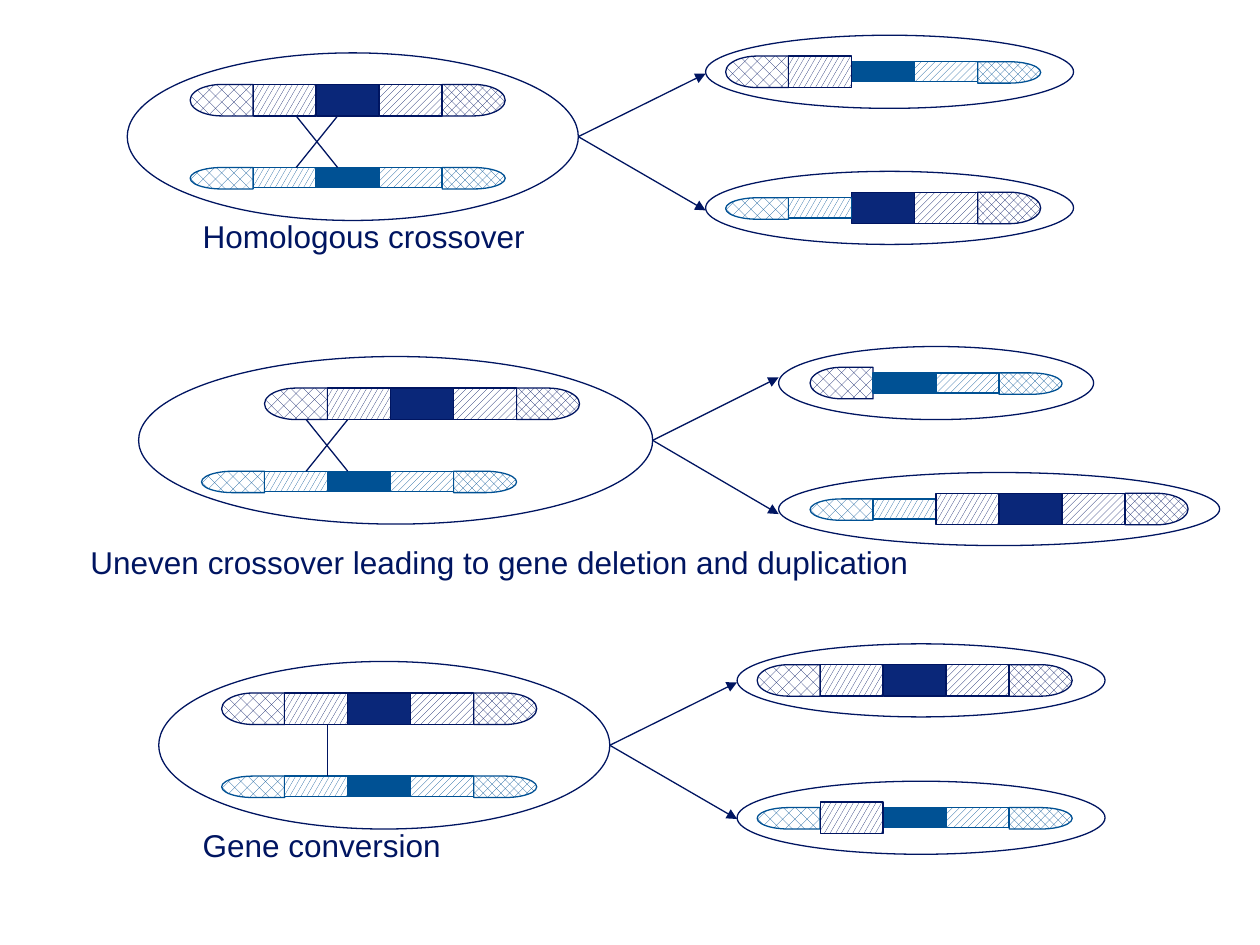
from lxml.etree import SubElement
from pptx import Presentation
from pptx.dml.color import RGBColor
from pptx.enum.dml import MSO_PATTERN as Pattern
from pptx.enum.shapes import MSO_CONNECTOR as Connector, MSO_SHAPE as Shape
from pptx.enum.text import MSO_AUTO_SIZE as AutoSize
from pptx.oxml.ns import qn
from pptx.util import Inches, Pt

COLORS = {"navy": "001561", "gene": "0A2779", "blue": "005194", "white": "FFFFFF"}
SEGMENT = 0.5
CAP = Shape.FLOWCHART_DELAY
SEGMENTS = {
    "E": (CAP, Pattern.PERCENT_50),
    "A": (CAP, Pattern.PERCENT_30),
    "D": (Shape.RECTANGLE, Pattern.WIDE_UPWARD_DIAGONAL),
    "C": (Shape.RECTANGLE, None),
    "B": (Shape.RECTANGLE, Pattern.LARGE_CONFETTI),
}
DRAW_ORDER = list(SEGMENTS)


def color(name):
    """Return the named colour."""
    return RGBColor.from_string(COLORS[name])


def add_outlined(page, kind, box, line="navy"):
    """Add an unfilled shape with a thin outline."""
    shape = page.shapes.add_shape(kind, *map(Inches, box))
    shape.shadow.inherit = False
    shape.fill.background()
    shape.line.color.rgb = color(line)
    shape.line.width = Pt(0.75)
    return shape


def add_line(page, start, end, arrow=False):
    """Add a straight line, with an arrowhead at its end if asked."""
    line = page.shapes.add_connector(Connector.STRAIGHT, *map(Inches, start + end))
    line.line.color.rgb = color("navy")
    line.line.width = Pt(0.75)
    properties = line.element.spPr
    if arrow:
        SubElement(properties.find(qn("a:ln")), qn("a:tailEnd"), type="triangle")
    SubElement(properties, qn("a:effectLst"))


def add_segment(page, code, left, middle):
    """Add one segment: upper case for the thick strand, lower case for the thin."""
    thick = code.isupper()
    kind, pattern = SEGMENTS[code.upper()]
    height = 0.25 if thick else 0.17 if kind == CAP else 0.16
    outline = "navy" if thick else "blue"
    top = middle - (0.125 if thick else 0.08)
    shape = add_outlined(page, kind, (left, top, SEGMENT, height), outline)
    if pattern is None:
        shape.fill.solid()
        shape.fill.fore_color.rgb = color("gene" if thick else "blue")
    else:
        shape.fill.patterned()
        shape.fill.pattern = pattern
        shape.fill.fore_color.rgb = color(outline)
        shape.fill.back_color.rgb = color("white")
    if code.upper() == "A":
        shape.element.spPr.find(qn("a:xfrm")).set("flipH", "1")


def add_chromosome(page, codes, left, middle):
    """Add a row of segments centred on a height."""
    ordered = sorted(enumerate(codes), key=lambda item: DRAW_ORDER.index(item[1].upper()))
    for place, code in ordered:
        add_segment(page, code, left + place * SEGMENT, middle)


def add_parent(page, box, thick_left, thin_left, exchanges):
    """Add the parent cell with two chromosomes and the lines between them."""
    left, top, width, height = box
    add_chromosome(page, "ABCDE", thick_left, top + 0.375)
    add_chromosome(page, "abcde", thin_left, top + 0.99)
    for upper, lower in exchanges:
        add_line(page, (upper, top + 0.5), (lower, top + 0.91))
    add_outlined(page, Shape.OVAL, box)


def add_daughter(page, box, codes, inset):
    """Add a daughter cell with one chromosome."""
    left, top, width, height = box
    add_chromosome(page, codes, left + inset, top + height / 2)
    add_outlined(page, Shape.OVAL, box)


def add_caption(page, box, text):
    """Add the name of a mechanism."""
    caption = page.shapes.add_textbox(*map(Inches, box))
    frame = caption.text_frame
    frame.word_wrap = False
    frame.auto_size = AutoSize.SHAPE_TO_FIT_TEXT
    para = frame.paragraphs[0]
    para.text = text
    para.font.name = "Arial"
    para.font.size = Pt(18)
    para.font.color.rgb = color("navy")


def add_mechanism(page, parent, strands, exchanges, daughters, inset, caption):
    """Add a parent cell, its two daughters, the arrows and the caption."""
    left, top, width, height = parent
    add_parent(page, parent, *strands, exchanges)
    start = (left + width, top + height / 2)
    for (box, codes), drop in zip(daughters, (-0.5, 0.585)):
        add_daughter(page, box, codes, inset)
        add_line(page, start, (box[0], start[1] + drop), arrow=True)
    add_caption(page, *caption)


def main():
    """Build the slide and save it."""
    deck = Presentation()
    deck.slide_width, deck.slide_height = Inches(10), Inches(7.5)
    page = deck.slides.add_slide(deck.slide_layouts[6])
    add_mechanism(
        page, (1.01, 0.42, 3.58, 1.33), (1.51, 1.51), [(2.35, 2.68), (2.68, 2.35)],
        [((5.6, 0.28, 2.92, 0.58), "ABcde"), ((5.6, 1.36, 2.92, 0.58), "abCDE")], 0.16,
        ((1.51, 1.67, 3.63, 0.57), "Homologous crossover"),
    )
    add_mechanism(
        page, (1.1, 2.83, 4.08, 1.33), (2.1, 1.6), [(2.43, 2.76), (2.76, 2.43)],
        [((6.18, 2.75, 2.5, 0.58), "Acde"), ((6.18, 3.75, 3.5, 0.58), "abBCDE")], 0.25,
        ((0.62, 4.26, 9.13, 0.57), "Uneven crossover leading to gene deletion and duplication"),
    )
    add_mechanism(
        page, (1.26, 5.25, 3.58, 1.33), (1.76, 1.76), [(2.6, 2.6)],
        [((5.85, 5.11, 2.92, 0.58), "ABCDE"), ((5.85, 6.2, 2.92, 0.58), "aBcde")], 0.16,
        ((1.51, 6.51, 2.7, 0.57), "Gene conversion"),
    )
    deck.save("out.pptx")


if __name__ == "__main__":
    main()
